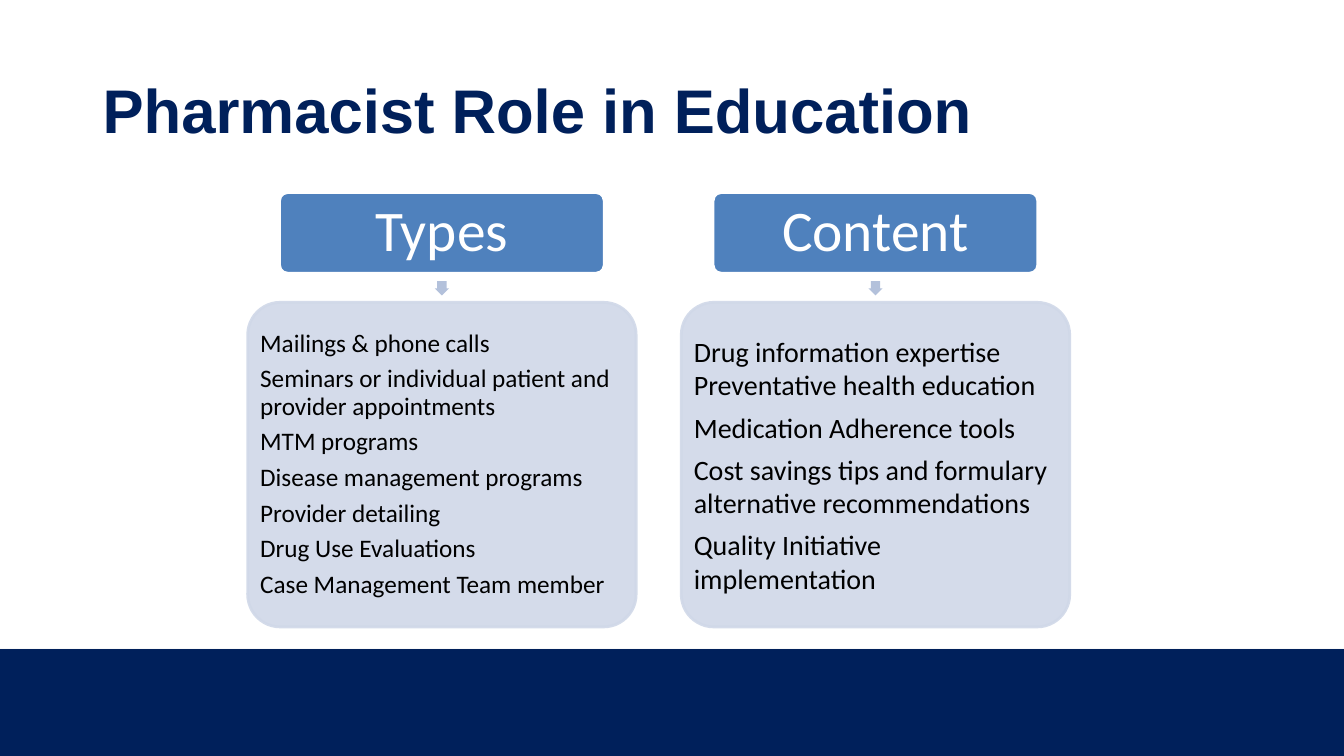
from dataclasses import dataclass

from lxml import etree
from pptx import Presentation
from pptx.dml.color import RGBColor
from pptx.enum.shapes import MSO_SHAPE
from pptx.enum.text import MSO_ANCHOR, PP_ALIGN
from pptx.oxml.ns import qn
from pptx.util import Inches, Pt

RECTANGLE = MSO_SHAPE.RECTANGLE
ROUNDED = MSO_SHAPE.ROUNDED_RECTANGLE
ARROW = MSO_SHAPE.RIGHT_ARROW
MIDDLE = MSO_ANCHOR.MIDDLE
LEFT, CENTER = PP_ALIGN.LEFT, PP_ALIGN.CENTER

WIDTH, HEIGHT = Inches(13.33), Inches(7.5)
FIRST_CENTER, COLUMN_PITCH = 32.88, 32.26


@dataclass(frozen=True)
class Theme:
    navy: str = "00205B"
    edge: str = "F8F8F8"
    header: str = "4F81BD"
    card: str = "D0D8E8"
    arrow: str = "B3C1DB"
    white: str = "FFFFFF"
    black: str = "000000"
    title_font: str = "Arial"
    body_font: str = "Calibri"
    title_size: int = 44
    header_size: int = 41


THEME = Theme()

COLUMNS = [
    ("Types", 18, 0.9, [
        "Mailings & phone calls",
        "Seminars or individual patient and provider appointments",
        "MTM programs",
        "Disease management programs",
        "Provider detailing",
        "Drug Use Evaluations",
        "Case Management Team member",
    ]),
    ("Content", 20, 1.0, [
        "Drug information expertise\nPreventative health education",
        "Medication Adherence tools",
        "Cost savings tips and formulary alternative recommendations",
        "Quality Initiative implementation",
    ]),
]


def place(left, top, width, height):
    return (round(WIDTH * left / 100), round(HEIGHT * top / 100),
            round(WIDTH * width / 100), round(HEIGHT * height / 100))


def set_opacity(fill_format_parent, percent):
    for color in fill_format_parent.iter(qn("a:srgbClr")):
        etree.SubElement(color, qn("a:alpha"), val=str(percent * 1000))


def add_block(page, kind, area, fill, outline=None, opacity=100):
    block = page.shapes.add_shape(kind, *place(*area))
    block.shadow.inherit = False
    block.fill.solid()
    block.fill.fore_color.rgb = RGBColor.from_string(fill)
    if outline:
        block.line.color.rgb = RGBColor.from_string(outline)
        block.line.width = Pt(2)
    else:
        block.line.fill.background()
    if kind == ROUNDED:
        block.adjustments[0] = 0.1
    if opacity < 100:
        set_opacity(block.element.spPr, opacity)
    return block


def write(box, lines, font, size, color, align=LEFT, spacing=0.9, after=0,
          inset=(0.1, 0.05), bold=False):
    frame = box.text_frame
    frame.word_wrap = True
    frame.vertical_anchor = MIDDLE
    frame.margin_left = frame.margin_right = Inches(inset[0])
    frame.margin_top = frame.margin_bottom = Inches(inset[1])
    for index, line in enumerate(lines):
        para = frame.paragraphs[0] if index == 0 else frame.add_paragraph()
        para.alignment = align
        para.line_spacing = spacing
        para.space_after = Pt(after)
        for part_index, part in enumerate(line.split("\n")):
            if part_index:
                para.add_line_break()
            span = para.add_run()
            span.text = part
            span.font.name = font
            span.font.size = Pt(size)
            span.font.bold = bold
            span.font.color.rgb = RGBColor.from_string(color)


def add_title(page, text):
    box = page.shapes.add_textbox(*place(6.9, 5.33, 86.27, 19.33))
    write(box, [text], THEME.title_font, THEME.title_size, THEME.navy, bold=True)


def add_footer(page):
    for top, fill in ((85.73, THEME.edge), (85.87, THEME.navy)):
        add_block(page, RECTANGLE, (0, top, 100, 100 - top), fill)


def add_column(page, center, heading, size, spacing, lines):
    header = add_block(page, ROUNDED, (center - 12.08, 25.47, 24.16, 10.67),
                       THEME.header, THEME.white)
    write(header, [heading], THEME.body_font, THEME.header_size, THEME.white,
          align=CENTER, inset=(0.06, 0.06))
    arrow = add_block(page, ARROW, (center - 0.53, 37.2, 1.06, 1.88), THEME.arrow)
    arrow.adjustments[0] = 0.67
    arrow.rotation = 90
    card = add_block(page, ROUNDED, (center - 14.45, 40, 28.9, 42.93),
                     THEME.card, THEME.card, opacity=90)
    write(card, lines, THEME.body_font, size, THEME.black,
          spacing=spacing, after=6, inset=(0.03, 0.03))


def main():
    deck = Presentation()
    deck.slide_width, deck.slide_height = WIDTH, HEIGHT
    page = deck.slides.add_slide(deck.slide_layouts[6])
    add_footer(page)
    add_title(page, "Pharmacist Role in Education")
    for index, column in enumerate(COLUMNS):
        add_column(page, FIRST_CENTER + index * COLUMN_PITCH, *column)
    deck.save("out.pptx")


if __name__ == "__main__":
    main()
